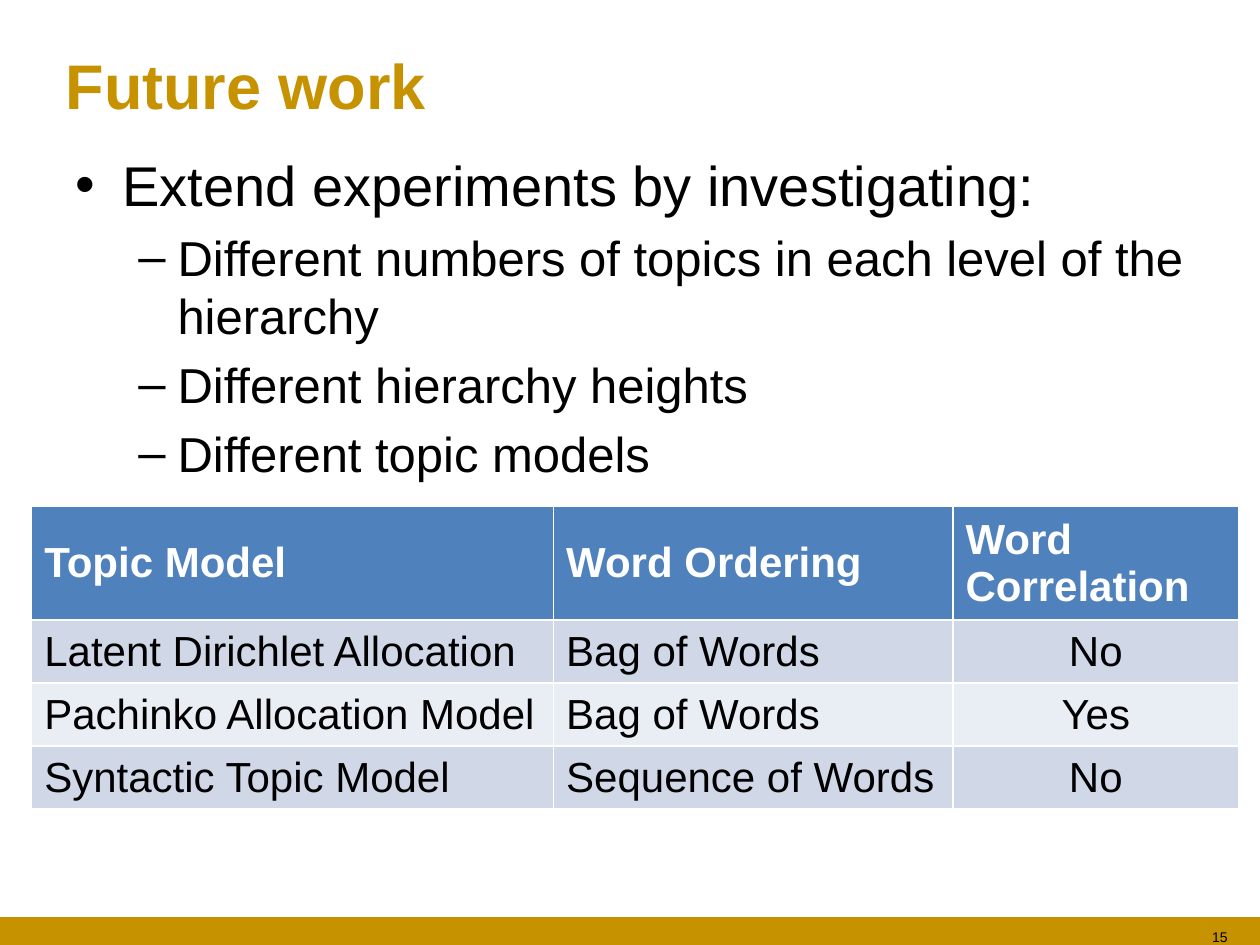
from lxml import etree
from pptx import Presentation
from pptx.dml.color import RGBColor
from pptx.enum.shapes import MSO_SHAPE
from pptx.enum.text import MSO_ANCHOR, PP_ALIGN
from pptx.oxml.ns import qn
from pptx.util import Cm, Pt

RECT = MSO_SHAPE.RECTANGLE
MIDDLE = MSO_ANCHOR.MIDDLE
LEFT, CENTER, RIGHT = PP_ALIGN.LEFT, PP_ALIGN.CENTER, PP_ALIGN.RIGHT

GOLD = RGBColor(0xC6, 0x92, 0x00)
BLACK = RGBColor(0, 0, 0)
WHITE = RGBColor(0xFF, 0xFF, 0xFF)
BLUE = RGBColor(0x4F, 0x81, 0xBD)
BANDS = [RGBColor(0xD0, 0xD8, 0xE8), RGBColor(0xE9, 0xED, 0xF4)]

LEVELS = [
    {"mark": "•", "left": 0.95, "hang": 0.95, "size": 32},
    {"mark": "–", "left": 2.06, "hang": 0.79, "size": 28},
]
POINTS = [
    (0, "Extend experiments by investigating:"),
    (1, "Different numbers of topics in each level of the hierarchy"),
    (1, "Different hierarchy heights"),
    (1, "Different topic models"),
]
MODELS = [
    ("Topic Model", "Word Ordering", "Word Correlation"),
    ("Latent Dirichlet Allocation", "Bag of Words", "No"),
    ("Pachinko Allocation Model", "Bag of Words", "Yes"),
    ("Syntactic Topic Model", "Sequence of Words", "No"),
]


def style(para, size, color=BLACK, bold=False, align=LEFT):
    para.alignment = align
    look = {"name": "Arial", "size": Pt(size), "bold": bold}
    for key, value in look.items():
        setattr(para.font, key, value)
    para.font.color.rgb = color


def place(shape, box):
    for key, value in zip(("left", "top", "width", "height"), box):
        setattr(shape, key, Cm(value))


def add_title(slide, box):
    title = slide.shapes.title
    place(title, box)
    frame = title.text_frame
    frame.text = "Future work"
    frame.vertical_anchor = MIDDLE
    style(frame.paragraphs[0], 36, GOLD, True)


def add_points(slide, box):
    frame = slide.shapes.add_textbox(*map(Cm, box)).text_frame
    frame.word_wrap = True
    for i, (level, text) in enumerate(POINTS):
        para = frame.add_paragraph() if i else frame.paragraphs[0]
        form = LEVELS[level]
        para.text = text
        para.level = level
        if i:
            para.space_before = Pt(0.2 * form["size"])
        props = para._p.get_or_add_pPr()
        props.set("marL", str(Cm(form["left"])))
        props.set("indent", str(-Cm(form["hang"])))
        etree.SubElement(props, qn("a:buFont"), typeface="Arial")
        etree.SubElement(props, qn("a:buChar"), char=form["mark"])
        style(para, form["size"])


def add_models(slide, box):
    shape = slide.shapes.add_table(len(MODELS), 3, *map(Cm, box))
    table = shape.table
    for col, width in zip(table.columns, (10.52, 8.05, 5.76)):
        col.width = Cm(width)
    for r, texts in enumerate(MODELS):
        head = r == 0
        table.rows[r].height = Cm(2.12 if head else 1.19)
        for c, text in enumerate(texts):
            cell = table.cell(r, c)
            cell.text = text
            cell.vertical_anchor = MIDDLE
            cell.fill.solid()
            cell.fill.fore_color.rgb = BLUE if head else BANDS[(r - 1) % 2]
            align = CENTER if c == 2 and not head else LEFT
            style(cell.text_frame.paragraphs[0], 24,
                  WHITE if head else BLACK, head, align)


def add_footer(slide, box):
    x, y, w, h = box
    bar = slide.shapes.add_shape(RECT, *map(Cm, box))
    bar.shadow.inherit = False
    bar.fill.solid()
    bar.fill.fore_color.rgb = GOLD
    bar.line.fill.background()
    area = (x + w - 4, y + 0.1, 3.6, h - 0.1)
    frame = slide.shapes.add_textbox(*map(Cm, area)).text_frame
    frame.word_wrap = True
    frame.text = "15"
    style(frame.paragraphs[0], 8, align=RIGHT)


def main():
    deck = Presentation()
    deck.slide_width, deck.slide_height = Cm(25.4), Cm(19.05)
    slide = deck.slides.add_slide(deck.slide_layouts[5])
    add_footer(slide, (0, 18.49, 25.4, 0.56))
    add_title(slide, (1.07, 0.81, 23.06, 1.78))
    add_points(slide, (1.27, 2.9, 22.86, 7))
    add_models(slide, (0.64, 10.21, 24.33, 5.69))
    deck.save("out.pptx")


if __name__ == "__main__":
    main()
